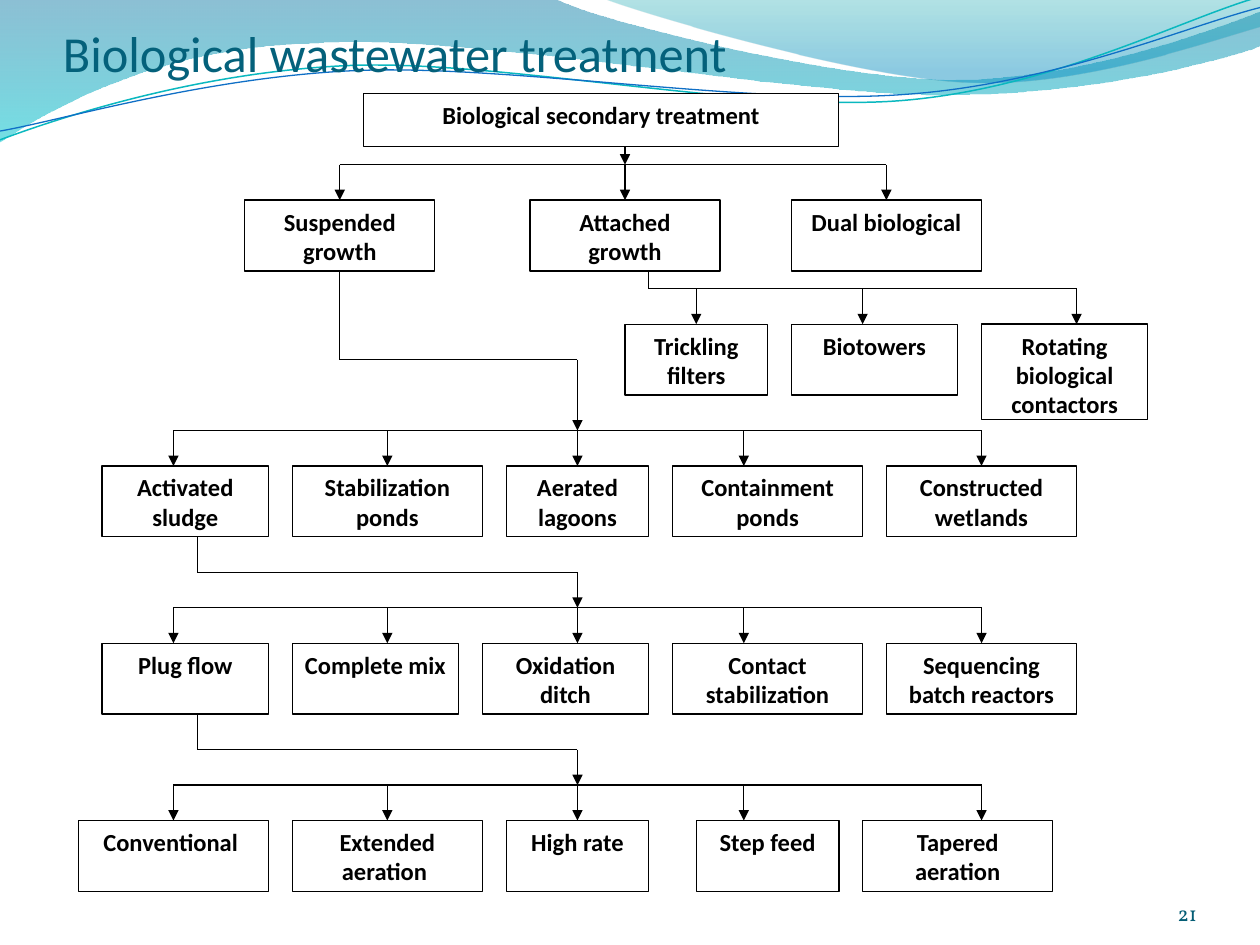
from math import cos, radians, sin

from pptx import Presentation, util as u
from pptx.dml.color import RGBColor
from pptx.enum import shapes as sh, text as tx
from pptx.oxml.ns import qn
from lxml import etree

HUE = {"ink": "000000", "paper": "FFFFFF", "title": "04617B", "page": "045D75",
       "deep": "0074A1", "aqua": "00C6CF", "teal": "00A1A9", "sky": "008BBF",
       "curl": "0AB8BF", "blue": "0F6FC6"}

# Header waves, in tenths of the slide width:
# a start point, then lines (2 numbers) or cubic curves (6 numbers)
BANDS = [
    ([(0, 0), (4.4, -.01), (4.76, .17, 6.64, .63, 7.58, .63),
      (8.53, .63, 9.58, .26, 10, .09), (10.01, .36),
      (9.83, .44, 8.7, .76, 7.46, .75), (6.22, .75, 3.82, .28, 2.57, .34),
      (1.29, .36, .46, .83, -.01, 1.13), (0, 0)],
     [("deep", 0, 45), ("aqua", 1, 55)]),
    ([(4.79, -.01), (5.09, .11, 6.82, .62, 7.69, .65),
      (8.56, .69, 9.61, .32, 10, .21), (10, 0), (4.79, -.01)],
     [("teal", 0, 30), ("sky", .8, 45)]),
]
CURLS = [
    ([(0, 1.11), (.48, .93, 1.58, .57, 2.77, .52),
      (3.95, .47, 5.93, .89, 7.13, .8), (8.33, .71, 9.38, .15, 9.98, -.02)],
     "curl", .85),
    ([(0, 1.04), (.47, .96, 1.64, .61, 2.83, .56),
      (4.03, .51, 5.97, .84, 7.17, .75), (8.36, .67, 9.41, .21, 10, .06)],
     "blue", .75),
]
TILT, HUB = -2.7, (4.99, .58)

# Chart on a 45 x 45 grid: top, bus start, arrow columns, boxes (left, width, text)
STEMS = [4, 13, 21, 28, 38]
ROWS = [
    (6, 11, [11, 23, 34],
     [(7, 8, "Suspended growth"), (19, 8, "Attached growth"), (30, 8, "Dual biological")]),
    (13, 24, [26, 33, 42],
     [(23, 6, "Trickling filters"), (30, 7, "Biotowers"),
      (38, 7, "Rotating biological contactors")]),
    (21, 4, STEMS,
     [(1, 7, "Activated sludge"), (9, 8, "Stabilization ponds"), (18, 6, "Aerated lagoons"),
      (25, 8, "Containment ponds"), (34, 8, "Constructed wetlands")]),
    (31, 4, STEMS,
     [(1, 7, "Plug flow"), (9, 7, "Complete mix"), (17, 7, "Oxidation ditch"),
      (25, 8, "Contact stabilization"), (34, 8, "Sequencing batch reactors")]),
    (41, 4, STEMS,
     [(0, 8, "Conventional "), (9, 8, "Extended aeration "), (18, 6, "High rate"),
      (26, 6, "Step feed"), (33, 8, "Tapered aeration")]),
]
# Links between levels: points on the grid, arrowhead at the end
LINKS = [
    ([(23, 3), (23, 4)], True),
    ([(24, 10), (24, 11)], False),
    ([(11, 10), (11, 15), (21, 15), (21, 19)], True),
    ([(5, 25), (5, 27), (21, 27), (21, 29)], True),
    ([(5, 35), (5, 37), (21, 37), (21, 39)], True),
]


def rgb(name):
    return RGBColor.from_string(HUE[name])


def put(obj, **vals):
    for key, val in vals.items():
        setattr(obj, key, val)


def pen(line, name="ink", size=.75):
    line.color.rgb = rgb(name)
    line.width = u.Pt(size)


def write(shape, words, align, anchor, pads, hue, **font):
    """Fill a shape with one styled paragraph."""
    frame = shape.text_frame
    sides = ("margin_left", "margin_top", "margin_right", "margin_bottom")
    put(frame, word_wrap=True, vertical_anchor=anchor,
        **{side: u.Cm(pad) for side, pad in zip(sides, pads)})
    para = frame.paragraphs[0]
    para.alignment = align
    run = para.add_run()
    run.text = words
    put(run.font, **font)
    run.font.color.rgb = rgb(hue)
    return para


def turn(x, y, deg):
    """Turn a point about the hub of the curls."""
    a, dx, dy = radians(deg), x - HUB[0], y - HUB[1]
    return HUB[0] + dx * cos(a) - dy * sin(a), HUB[1] + dx * sin(a) + dy * cos(a)


def bend(shape, segs):
    """Join each three points of a cubic segment into one curve."""
    steps = list(shape._element.spPr.iter(qn("a:lnTo")))
    for seg in segs:
        part, steps = steps[:len(seg) // 2], steps[len(seg) // 2:]
        if len(part) == 3:
            part[0].tag = qn("a:cubicBezTo")
            for step in part[1:]:
                part[0].append(step[0])
                step.getparent().remove(step)


def header(slide, left, top, wide):
    """Waves across the top of the slide."""
    def draw(home, route, tilt=0):
        flat = [seg[i:i + 2] for seg in route for i in range(0, len(seg), 2)]
        pts = [(u.Cm(left + x * wide / 10), u.Cm(top + y * wide / 10))
               for x, y in (turn(*pt, -tilt) for pt in flat)]
        form = home.build_freeform(*pts[0])
        form.add_line_segments(pts[1:], close=not tilt)
        shape = form.convert_to_shape()
        bend(shape, route[1:])
        shape.shadow.inherit = False
        shape.rotation = tilt
        return shape

    for route, stops in BANDS:
        band = draw(slide.shapes, route)
        band.line.fill.background()
        band.fill.gradient()
        band.fill.gradient_angle = 270
        for stop, (name, pos, _) in zip(band.fill.gradient_stops, stops):
            stop.color.rgb = rgb(name)
            stop.position = pos
        tints = list(band._element.spPr.iter(qn("a:srgbClr")))
        for tint, (_, _, alpha) in zip(tints, stops):
            etree.SubElement(tint, qn("a:alpha")).set("val", str(alpha * 1000))
    group = slide.shapes.add_group_shape().shapes
    for route, name, size in CURLS:
        curl = draw(group, route, TILT)
        curl.fill.background()
        pen(curl.line, name, size)


def label(slide, box, words, align, hue, pads=(0, 0, 0, 0), **font):
    """Free text that sits on the bottom of its box."""
    area = slide.shapes.add_textbox(*map(u.Cm, box))
    write(area, words, align, tx.MSO_ANCHOR.BOTTOM, pads, hue, **font)


def tree(slide, left, top, wide, high):
    """Chart of treatment types."""
    dx, dy = wide / 45, high / 45
    group = slide.shapes.add_group_shape().shapes

    def node(x, y, w, h, words):
        rect = group.add_shape(
            sh.MSO_SHAPE.RECTANGLE, u.Cm(left + x * dx), u.Cm(top + y * dy),
            u.Cm(w * dx), u.Cm(h * dy))
        rect.shadow.inherit = False
        rect.fill.solid()
        rect.fill.fore_color.rgb = rgb("paper")
        pen(rect.line)
        para = write(rect, words, tx.PP_ALIGN.CENTER, tx.MSO_ANCHOR.TOP,
                     (.25, .13, .25, .13), "ink", name="Calibri", size=u.Pt(14), bold=True)
        para.space_after = u.Pt(10)

    def wire(pts, head=False):
        for i, (a, b) in enumerate(zip(pts, pts[1:]), 2):
            ends = [u.Cm(v) for x, y in (a, b) for v in (left + x * dx, top + y * dy)]
            line = group.add_connector(sh.MSO_CONNECTOR.STRAIGHT, *ends)
            pen(line.line)
            if head and i == len(pts):
                tip = etree.SubElement(line.line._get_or_add_ln(), qn("a:tailEnd"))
                tip.set("type", "triangle")
            etree.SubElement(line._element.spPr, qn("a:effectLst"))

    node(12, 0, 20, 3, "Biological secondary treatment")
    for y, start, stems, nodes in ROWS:
        for x, w, words in nodes:
            node(x, y, w, 5.4 if words.startswith("Rotating") else 4, words)
        wire([(start, y - 2), (stems[-1], y - 2)])
        for x in stems:
            wire([(x, y - 2), (x, y)], True)
    for pts, head in LINKS:
        wire(pts, head)


def main():
    prs = Presentation()
    put(prs, slide_width=u.Cm(25.4), slide_height=u.Cm(19.05))
    slide = prs.slides.add_slide(prs.slide_layouts[6])
    header(slide, 0, 0, 25.4)
    label(slide, (1.27, .5, 22.86, 1.17), "Biological wastewater treatment",
          tx.PP_ALIGN.LEFT, "title", (0, .13, 0, 0), name="Calibri", size=u.Pt(28.8))
    label(slide, (22.02, 17.65, 2.11, 1.02), "21", tx.PP_ALIGN.RIGHT, "page",
          name="Vollkorn", size=u.Pt(12))
    tree(slide, 1.58, 1.89, 21.56, 16.08)
    prs.save("out.pptx")


if __name__ == "__main__":
    main()
